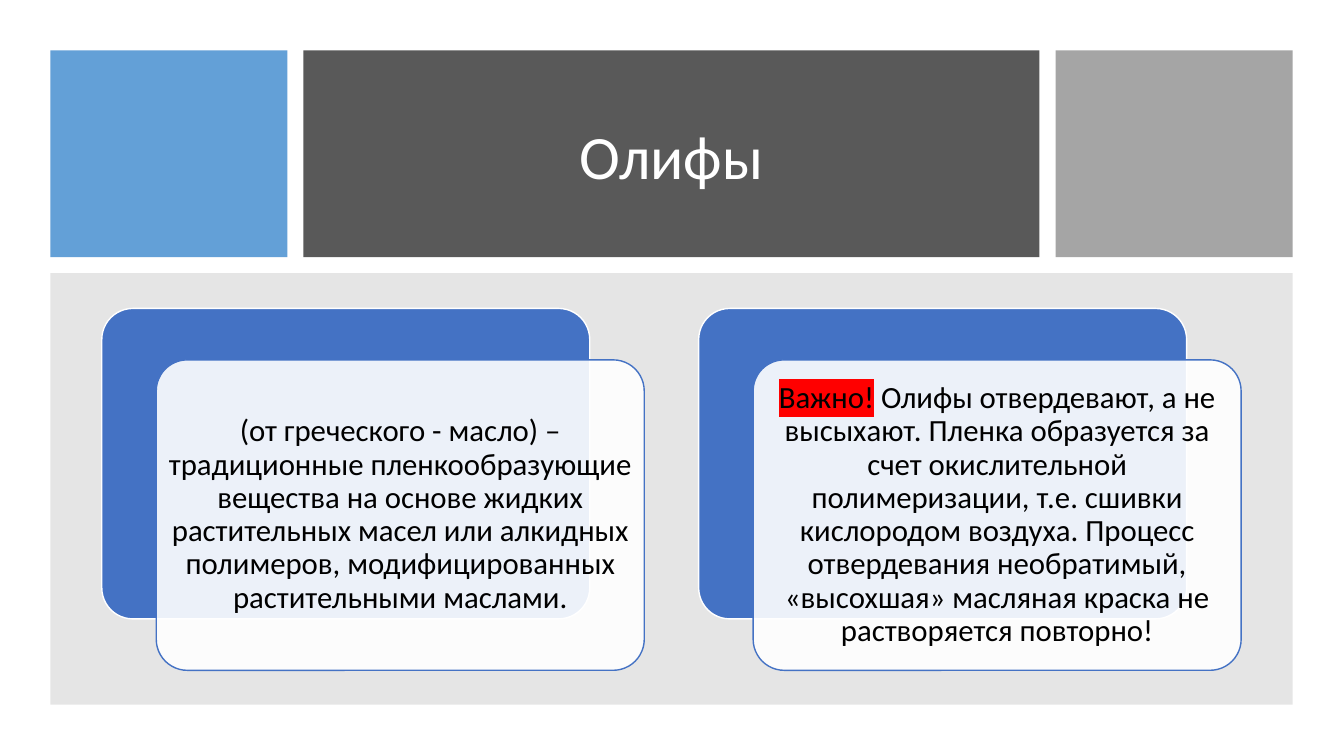
"""Builds a slide about drying oils: a title band and two layered cards."""
from lxml import etree
from pptx import Presentation
from pptx.dml.color import RGBColor
from pptx.enum import shapes, text
from pptx.oxml.ns import qn
from pptx.util import Inches, Pt

BLACK = RGBColor(0x00, 0x00, 0x00)
WHITE = RGBColor(0xFF, 0xFF, 0xFF)
RED = RGBColor(0xFF, 0x00, 0x00)
SKY = RGBColor(0x5B, 0x9B, 0xD5)
BLUE = RGBColor(0x44, 0x72, 0xC4)
DARK = RGBColor(0x59, 0x59, 0x59)
SILVER = RGBColor(0xA5, 0xA5, 0xA5)
GREY = RGBColor(0x80, 0x80, 0x80)

CARD_W, CARD_H = 4.84, 3.08
CARD_LEFT, CARD_TOP, CARD_STEP = 1.01, 3.06, 5.92
FRONT_DX, FRONT_DY = 0.54, 0.51

CARDS = [
    [("(от греческого - масло) – традиционные пленкообразующие вещества "
      "на основе жидких растительных масел или алкидных полимеров, "
      "модифицированных растительными маслами.", None)],
    [("Важно!", RED),
     (" Олифы отвердевают, а не высыхают. Пленка образуется за счет "
      "окислительной полимеризации, т.е. сшивки кислородом воздуха. "
      "Процесс отвердевания необратимый, «высохшая» масляная краска "
      "не растворяется повторно!", None)],
]


def add_block(s, box, color, alpha=100, line=None, rounded=False):
    kind = shapes.MSO_SHAPE.ROUNDED_RECTANGLE if rounded else shapes.MSO_SHAPE.RECTANGLE
    sp = s.shapes.add_shape(kind, *map(Inches, box))
    sp.shadow.inherit = False
    if rounded:
        sp.adjustments[0] = 0.1
    sp.fill.solid()
    sp.fill.fore_color.rgb = color
    if alpha < 100:
        clr = sp._element.spPr.find(qn("a:solidFill"))[0]
        etree.SubElement(clr, qn("a:alpha")).set("val", str(alpha * 1000))
    if line is None:
        sp.line.fill.background()
    else:
        sp.line.color.rgb = line
        sp.line.width = Pt(1)
    return sp


def add_run(p, words, size=22, color=BLACK, highlight=None):
    r = p.add_run()
    r.text = words
    r.font.size = Pt(size)
    r.font.color.rgb = color
    if highlight is not None:
        mark = etree.Element(qn("a:highlight"))
        etree.SubElement(mark, qn("a:srgbClr")).set("val", str(highlight))
        r.font._element.find(qn("a:solidFill")).addnext(mark)
    r.font.name = "Calibri"


def set_text(sp, runs, inset=0, **fmt):
    tf = sp.text_frame
    tf.word_wrap = True
    tf.auto_size = text.MSO_AUTO_SIZE.NONE
    tf.vertical_anchor = text.MSO_ANCHOR.MIDDLE
    tf.margin_left = tf.margin_right = Inches(inset)
    tf.margin_top = tf.margin_bottom = Inches(inset)
    p = tf.paragraphs[0]
    p.alignment = text.PP_ALIGN.CENTER
    p.line_spacing = 0.9
    for words, highlight in runs:
        add_run(p, words, highlight=highlight, **fmt)


def add_title(s, words):
    sp = s.shapes.title
    sp.left, sp.top, sp.width, sp.height = map(Inches, (3.33, 0.8, 6.66, 1.56))
    set_text(sp, [(words, None)], inset=0.05, size=44, color=WHITE)
    s.shapes._spTree.append(sp._element)


def add_card(s, left, runs):
    add_block(s, (left, CARD_TOP, CARD_W, CARD_H), BLUE, line=WHITE, rounded=True)
    front = add_block(s, (left + FRONT_DX, CARD_TOP + FRONT_DY, CARD_W, CARD_H),
                      WHITE, alpha=90, line=BLUE, rounded=True)
    set_text(front, runs)


def main():
    prs = Presentation()
    prs.slide_width, prs.slide_height = Inches(13.33), Inches(7.5)
    s = prs.slides.add_slide(prs.slide_layouts[5])
    add_block(s, (0.5, 0.5, 2.35, 2.05), SKY, alpha=95)
    add_block(s, (3.01, 0.5, 7.3, 2.05), DARK)
    add_title(s, "Олифы")
    add_block(s, (10.47, 0.5, 2.35, 2.05), SILVER)
    add_block(s, (0.5, 2.71, 12.32, 4.28), GREY, alpha=20)
    for i, runs in enumerate(CARDS):
        add_card(s, CARD_LEFT + i * CARD_STEP, runs)
    prs.save("out.pptx")


if __name__ == "__main__":
    main()
